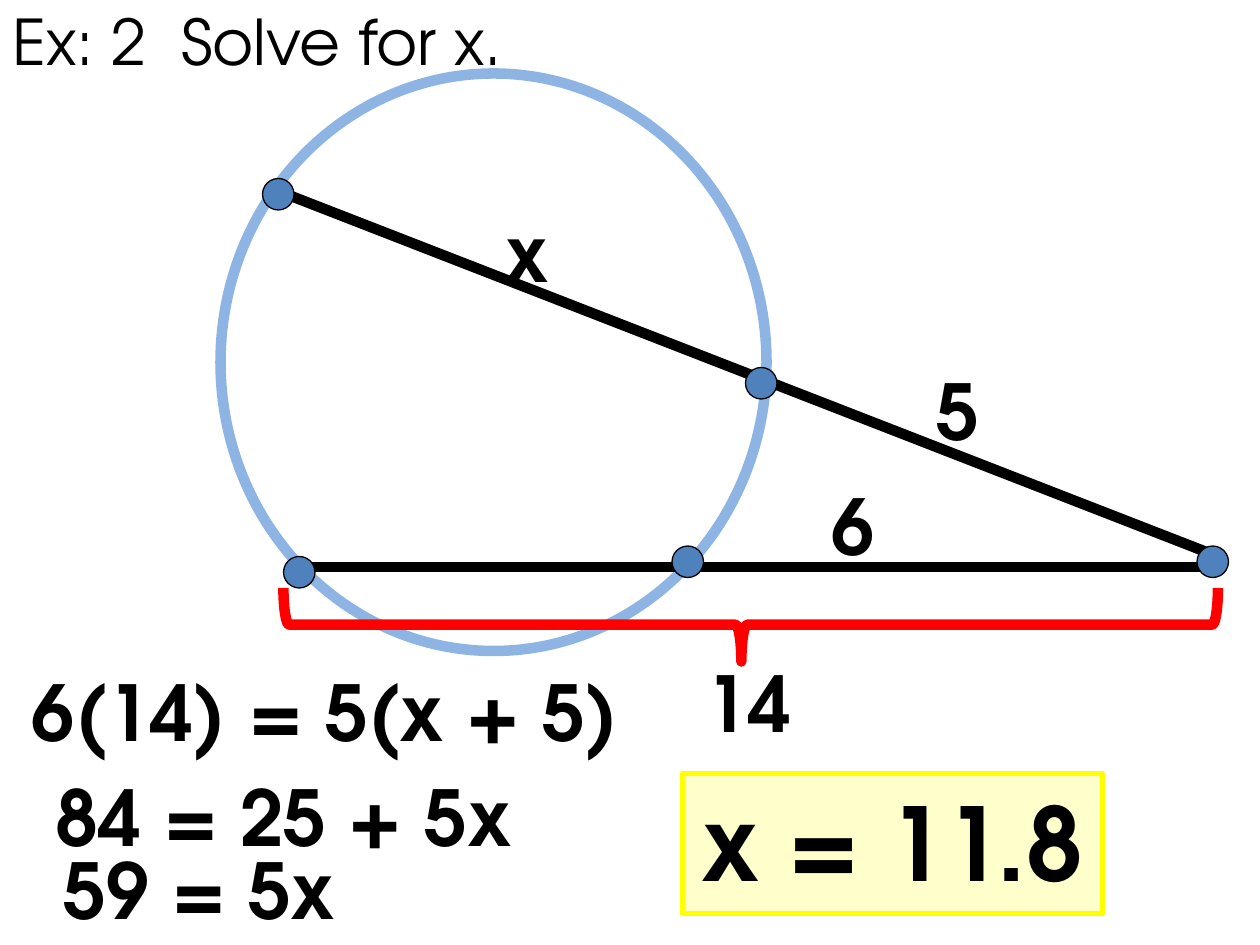
from dataclasses import dataclass

from lxml.etree import SubElement
from pptx import Presentation
from pptx.dml.color import RGBColor
from pptx.enum.shapes import MSO_CONNECTOR, MSO_SHAPE
from pptx.enum.text import MSO_ANCHOR, MSO_AUTO_SIZE, PP_ALIGN
from pptx.oxml.ns import qn
from pptx.util import Pt


@dataclass(frozen=True)
class Theme:
    font: str = "TeX Gyre Adventor"
    ink: str = "000000"
    circle: str = "8EB4E3"
    dot: str = "4F81BD"
    brace: str = "FF0000"
    answer_fill: str = "FFFFCC"
    answer_line: str = "FFFF00"
    title_size: int = 36
    text_size: int = 44
    answer_size: int = 58
    heavy: float = 6
    medium: float = 3
    thin: float = 0.75


THEME = Theme()

# All lengths are points; frames are left, top, width, height.
TITLE = ("Ex: 2  Solve for x.", (0, -2, 588, 50))
CIRCLE = (126, 42, 312, 330)
SECANTS = [((696, 318), (156, 108)), ((168, 324), (690, 324))]
DOT_SIZE = 18
DOTS = [(150, 102), (684, 312), (426, 210), (384, 312), (162, 318)]
BRACE = (408, 90, 42, 534)
LABEL_SIZE = (72, 60)
LABELS = [("5", (528, 204)), ("6", (468, 270)), ("x", (282, 114)), ("14", (396, 371))]
STEPS = [
    ("6(14) = 5(x + 5)", (6, 376, 360, 60)),
    ("84 = 25 + 5x", (12, 436, 300, 60)),
    ("59 = 5x", (0, 478, 228, 60)),
]
ANSWER = ("x = 11.8", (390, 442, 240, 80))


def color(code):
    return RGBColor.from_string(code)


def points(values):
    return [Pt(value) for value in values]


def write(box, text, size, bold=True, align=PP_ALIGN.LEFT, anchor=MSO_ANCHOR.TOP):
    frame = box.text_frame
    frame.word_wrap = True
    frame.auto_size = MSO_AUTO_SIZE.NONE
    frame.vertical_anchor = anchor
    para = frame.paragraphs[0]
    para.alignment = align
    span = para.add_run()
    span.text = text
    span.font.name = THEME.font
    span.font.size = Pt(size)
    span.font.bold = bold
    span.font.color.rgb = color(THEME.ink)


def add_text(page, text, frame, align=PP_ALIGN.LEFT):
    write(page.shapes.add_textbox(*points(frame)), text, THEME.text_size, align=align)


def add_figure(page, kind, frame, line, width, fill=None):
    shape = page.shapes.add_shape(kind, *points(frame))
    shape.shadow.inherit = False
    shape.line.color.rgb = color(line)
    shape.line.width = Pt(width)
    if fill:
        shape.fill.solid()
        shape.fill.fore_color.rgb = color(fill)
    else:
        shape.fill.background()
    return shape


def add_secant(page, start, end):
    line = page.shapes.add_connector(MSO_CONNECTOR.STRAIGHT, *points(start + end))
    line.line.color.rgb = color(THEME.ink)
    line.line.width = Pt(THEME.heavy)
    SubElement(line._element.spPr, qn("a:effectLst"))


def add_title(page):
    text, frame = TITLE
    title = page.shapes.title
    title.left, title.top, title.width, title.height = points(frame)
    write(title, text, THEME.title_size, bold=False, anchor=MSO_ANCHOR.BOTTOM)


def add_diagram(page):
    upper, lower = SECANTS
    add_secant(page, *upper)
    add_figure(page, MSO_SHAPE.OVAL, CIRCLE, THEME.circle, THEME.heavy)
    add_secant(page, *lower)
    for corner in DOTS:
        add_figure(page, MSO_SHAPE.OVAL, corner + (DOT_SIZE, DOT_SIZE),
                   THEME.ink, THEME.thin, THEME.dot)
    brace = add_figure(page, MSO_SHAPE.LEFT_BRACE, BRACE, THEME.brace, THEME.heavy)
    brace.rotation = 270
    brace.adjustments[0] = 0.08
    brace.adjustments[1] = 0.49
    for text, corner in LABELS:
        add_text(page, text, corner + LABEL_SIZE)


def add_solution(page):
    for text, frame in STEPS:
        add_text(page, text, frame, PP_ALIGN.CENTER)
    text, frame = ANSWER
    box = add_figure(page, MSO_SHAPE.RECTANGLE, frame, THEME.answer_line,
                     THEME.medium, THEME.answer_fill)
    write(box, text, THEME.answer_size, align=PP_ALIGN.CENTER)


def main():
    deck = Presentation()
    deck.slide_width, deck.slide_height = Pt(720), Pt(540)
    page = deck.slides.add_slide(deck.slide_layouts.get_by_name("Title Only"))
    add_title(page)
    add_diagram(page)
    add_solution(page)
    deck.save("out.pptx")


if __name__ == "__main__":
    main()
